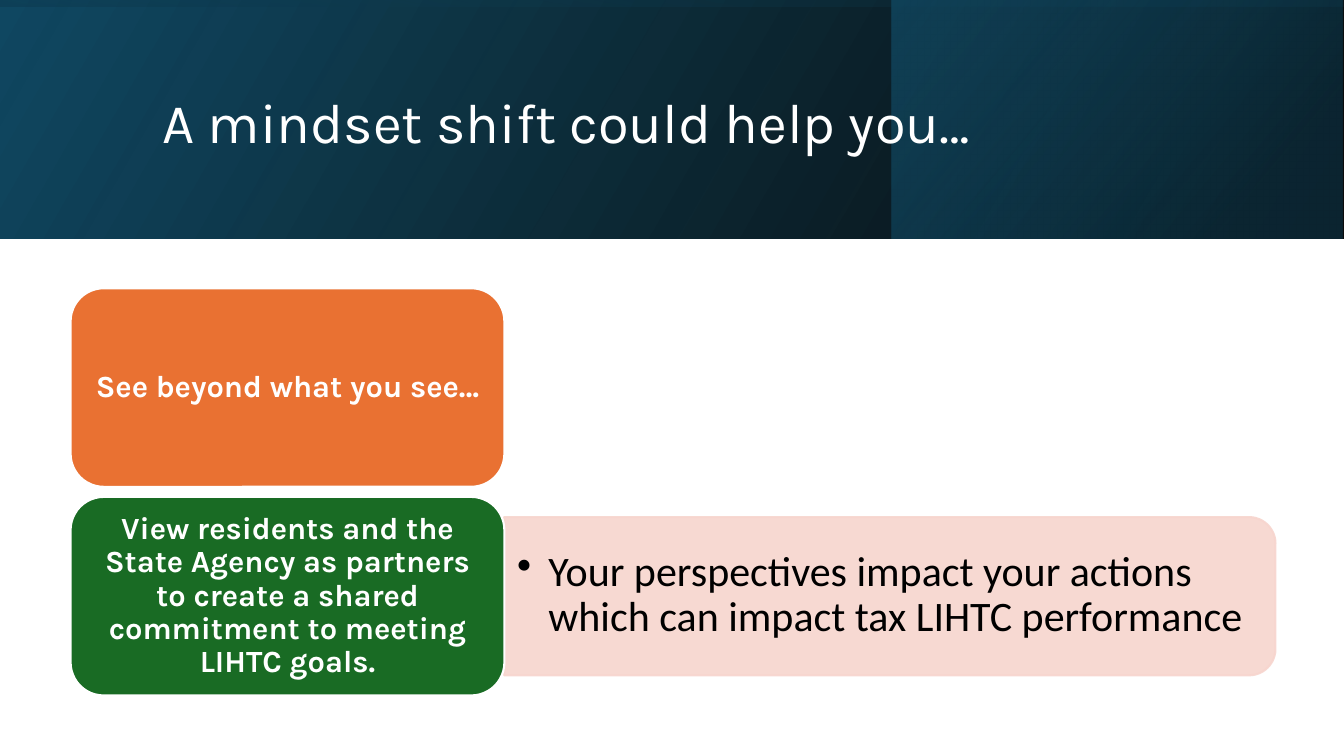
from lxml.etree import SubElement
from pptx import Presentation
from pptx.dml.color import RGBColor
from pptx.enum.shapes import MSO_SHAPE
from pptx.enum.text import MSO_ANCHOR, PP_ALIGN
from pptx.oxml.ns import qn
from pptx.util import Inches, Pt

WHITE = RGBColor(0xFF, 0xFF, 0xFF)
BLACK = RGBColor(0x00, 0x00, 0x00)
TEAL = RGBColor(0x10, 0x48, 0x62)
NAVY = RGBColor(0x0B, 0x30, 0x41)
BLUE = RGBColor(0x15, 0x60, 0x82)
ORANGE = RGBColor(0xE9, 0x71, 0x32)
GREEN = RGBColor(0x19, 0x6B, 0x24)
PINK = RGBColor(0xF7, 0xD5, 0xCE)

TITLE_FONT = {"name": "Karla", "size": Pt(40), "bold": False}
CARD_FONT = {"name": "Karla", "size": Pt(22), "bold": True}
BODY_FONT = {"name": "Calibri", "size": Pt(30), "bold": False}

BANNER_HEIGHT = 31.6
CARD_LEFT, CARD_TOP, CARD_STEP = 5.25, 38.13, 27.6
CARD_WIDTH, CARD_HEIGHT = 32.28, 26.27
CARDS = [
    ("See beyond what you see…", ORANGE),
    ("View residents and the State Agency as partners to create a shared "
     "commitment to meeting LIHTC goals.", GREEN),
]


class Deck:
    """Hold the style and current slide, with lengths in percent of its size."""

    def __init__(self):
        """Open a slide that has only a title."""
        self.prs = Presentation()
        self.prs.slide_width, self.prs.slide_height = Inches(13.33), Inches(7.5)
        self.s = self.prs.slides.add_slide(self.prs.slide_layouts[5])

    def box(self, x, y, w, h):
        """Turn percentages into lengths."""
        width, height = self.prs.slide_width, self.prs.slide_height
        return [int(v * full / 100) for v, full in
                zip((x, y, w, h), (width, height, width, height))]

    def shape(self, kind, area, rotation=0):
        """Add a shape that covers the area after its rotation."""
        x, y, w, h = self.box(*area)
        if rotation % 180:
            x, y, w, h = x + (w - h) // 2, y + (h - w) // 2, h, w
        sp = self.s.shapes.add_shape(kind, x, y, w, h)
        sp.rotation = rotation
        sp.shadow.inherit = False
        return sp

    def solid(self, sp, fill, line):
        """Give a shape a plain fill and a thin outline."""
        sp.fill.solid()
        sp.fill.fore_color.rgb = fill
        sp.line.color.rgb = line
        sp.line.width = Pt(1.5)

    def band(self, area, stops, angle, rotation=0):
        """Add a mirrored rectangle with a translucent gradient."""
        sp = self.shape(MSO_SHAPE.RECTANGLE, area, rotation)
        sp.line.fill.background()
        sp.fill.gradient()
        grad = sp._element.spPr.find(qn("a:gradFill"))
        for child in list(grad):
            grad.remove(child)
        grad.set("rotWithShape", "1")
        stop_list = SubElement(grad, qn("a:gsLst"))
        for position, color, alpha in stops:
            stop = SubElement(stop_list, qn("a:gs"), pos=str(position * 1000))
            clr = SubElement(stop, qn("a:srgbClr"), val=str(color))
            SubElement(clr, qn("a:alpha"), val=str(alpha * 1000))
        SubElement(grad, qn("a:lin"), ang=str(angle * 60000), scaled="0")
        sp._element.spPr.find(qn("a:xfrm")).set("flipH", "1")

    def label(self, sp, text, font, color, align, inset=(0.1, 0.05)):
        """Put one formatted paragraph in a shape and return it."""
        tf = sp.text_frame
        side, edge = map(Inches, inset)
        frame = {"word_wrap": True, "vertical_anchor": MSO_ANCHOR.MIDDLE,
                 "margin_left": side, "margin_right": side,
                 "margin_top": edge, "margin_bottom": edge}
        for name, value in frame.items():
            setattr(tf, name, value)
        p = tf.paragraphs[0]
        p.alignment, p.line_spacing = align, 0.9
        r = p.add_run()
        r.text = text
        for name, value in font.items():
            setattr(r.font, name, value)
        r.font.color.rgb = color
        return p

    def title(self, text, area):
        """Place and fill the title."""
        sp = self.s.shapes.title
        sp.left, sp.top, sp.width, sp.height = self.box(*area)
        self.label(sp, text, TITLE_FONT, WHITE, PP_ALIGN.LEFT)

    def card(self, text, color, area):
        """Add a rounded card with a centred statement."""
        sp = self.shape(MSO_SHAPE.ROUNDED_RECTANGLE, area)
        self.solid(sp, color, WHITE)
        self.label(sp, text, CARD_FONT, WHITE, PP_ALIGN.CENTER, (0.09, 0.05))

    def panel(self, area):
        """Add a translucent panel rounded on its right side."""
        sp = self.shape(MSO_SHAPE.ROUND_2_SAME_RECTANGLE, area, 90)
        self.solid(sp, PINK, PINK)
        for clr in list(sp._element.spPr.iter(qn("a:srgbClr"))):
            SubElement(clr, qn("a:alpha"), val="90000")

    def bullet(self, text, area):
        """Add a text box with one bulleted paragraph."""
        sp = self.s.shapes.add_textbox(*self.box(*area))
        p = self.label(sp, text, BODY_FONT, BLACK, PP_ALIGN.LEFT, (0.12, 0.06))
        pPr = p._p.get_or_add_pPr()
        pPr.set("marL", str(Inches(0.31)))
        pPr.set("indent", str(-Inches(0.31)))
        SubElement(pPr, qn("a:buChar"), char="•")


def main():
    """Build and save the slide."""
    deck = Deck()
    banner = (0, 0, 100, BANNER_HEIGHT)
    deck.band(banner, [(0, BLACK, 96), (100, TEAL, 100)], 330)
    deck.band((66.32, 0, 33.6, BANNER_HEIGHT),
              [(19, NAVY, 68), (100, BLUE, 48)], 320)
    deck.band(banner, [(23, TEAL, 16), (99, BLACK, 45)], 350, 270)
    title = deck.s.shapes.title._element
    title.getparent().append(title)
    deck.title("A mindset shift could help you…", (11.33, 5.07, 79.74, 22.93))
    deck.panel((37.51, 68.4, 57.39, 20.93))
    deck.bullet("Your perspectives impact your actions which can impact "
                "tax LIHTC performance", (37.58, 69.33, 56.79, 18.93))
    for i, (text, color) in enumerate(CARDS):
        deck.card(text, color, (CARD_LEFT, CARD_TOP + i * CARD_STEP,
                                CARD_WIDTH, CARD_HEIGHT))
    deck.prs.save("out.pptx")


if __name__ == "__main__":
    main()
